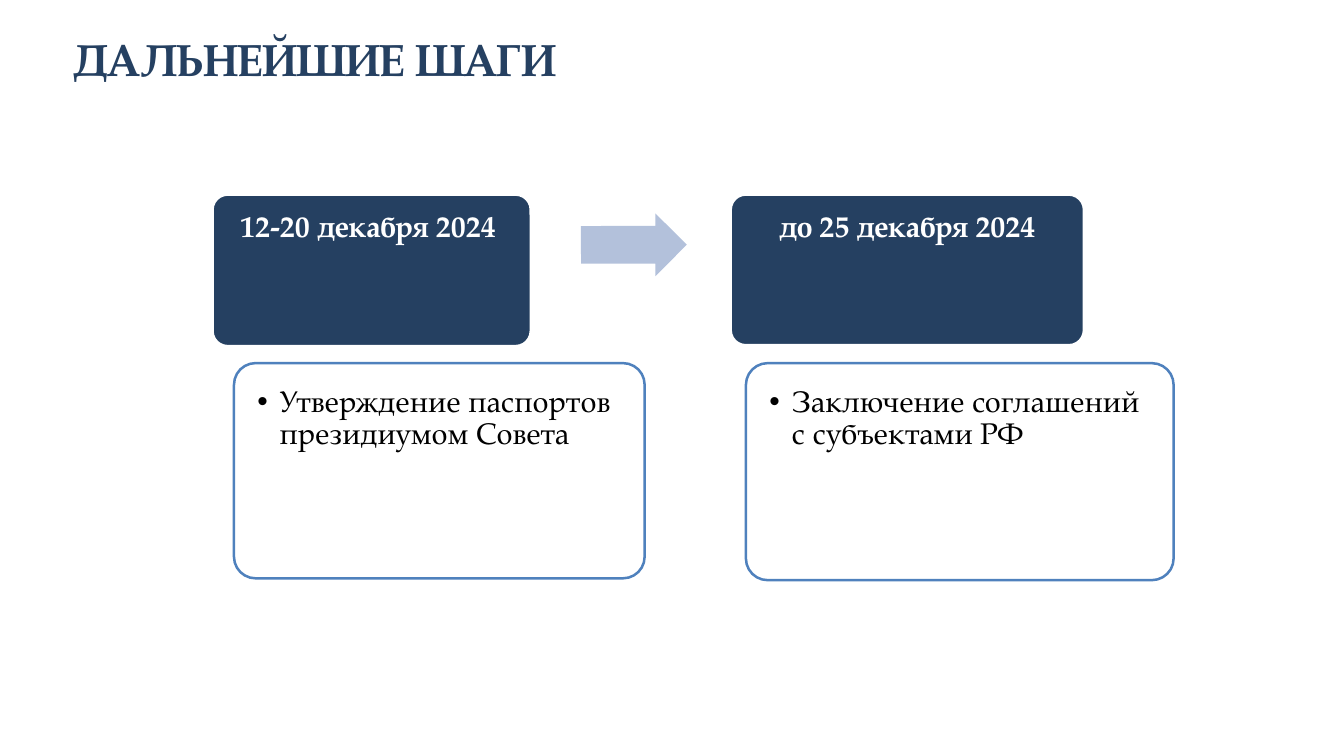
from dataclasses import dataclass

from lxml import etree
from pptx import Presentation, util as u
from pptx.dml.color import RGBColor
from pptx.enum import shapes, text
from pptx.oxml.ns import qn

PX = 9144  # EMU in one px, at 100 px to the inch
FONT = "TeX Gyre Pagella"
COLORS = {
    "navy": "254061",
    "blue": "4F81BD",
    "pale": "B3C1DB",
    "white": "FFFFFF",
    "black": "000000",
}


@dataclass(frozen=True)
class Box:
    left: int
    top: int
    width: int
    height: int

    def emu(self) -> tuple[int, ...]:
        return tuple(v * PX for v in (self.left, self.top, self.width, self.height))

    def inset(self, gap: int) -> "Box":
        return Box(self.left + gap, self.top + gap, self.width - 2 * gap, self.height - 2 * gap)


@dataclass(frozen=True)
class Step:
    date: str
    task: str
    date_box: Box
    task_box: Box


STEPS = [
    Step("12-20 декабря 2024 ", "Утверждение паспортов президиумом Совета",
         Box(237, 217, 355, 169), Box(261, 405, 458, 240)),
    Step("до 25 декабря 2024", "Заключение соглашений\nс субъектами РФ",
         Box(815, 217, 394, 168), Box(832, 405, 477, 242)),
]
ARROW = Box(648, 238, 118, 70)
TITLE = Box(72, 30, 576, 71)


def rgb(color: str) -> RGBColor:
    return RGBColor.from_string(COLORS[color])


def write(shape, content: str, *, size: int = 24, color: str = "black", bold: bool = False,
          align=text.PP_ALIGN.LEFT, spacing: float = 0.9, margin: int | None = None,
          wrap: bool = True, fit=text.MSO_AUTO_SIZE.NONE) -> None:
    frame = shape.text_frame
    frame.word_wrap, frame.auto_size = wrap, fit
    frame.vertical_anchor = text.MSO_ANCHOR.TOP
    if margin is not None:
        frame.margin_left = frame.margin_top = frame.margin_right = margin * PX
    paragraph = frame.paragraphs[0]
    paragraph.text = content
    paragraph.alignment, paragraph.line_spacing = align, spacing
    paragraph.space_before = u.Pt(0)
    for run in paragraph.runs:
        run.font.name, run.font.size, run.font.bold = FONT, u.Pt(size), bold
        run.font.color.rgb = rgb(color)


def place(shape, box: Box) -> None:
    shape.left, shape.top, shape.width, shape.height = box.emu()


def add_block(slide, kind, box: Box, fill: str, line: str | None = None):
    block = slide.shapes.add_shape(kind, *box.emu())
    block.shadow.inherit = False
    block.fill.solid()
    block.fill.fore_color.rgb = rgb(fill)
    if line:
        block.line.color.rgb = rgb(line)
        block.line.width = u.Pt(2)
    else:
        block.line.fill.background()
    return block


def add_card(slide, box: Box, fill: str, line: str):
    card = add_block(slide, shapes.MSO_SHAPE.ROUNDED_RECTANGLE, box, fill, line)
    card.adjustments[0] = 0.1
    return card


def set_opacity(shape, percent: int) -> None:
    color = shape.element.spPr.find(qn("a:solidFill")).find(qn("a:srgbClr"))
    etree.SubElement(color, qn("a:alpha"), val=str(percent * 1000))


def set_hanging_indent(paragraph, indent: int) -> None:
    properties = paragraph._p.get_or_add_pPr()
    properties.set("marL", str(indent * PX))
    properties.set("indent", str(-indent * PX))


def add_step(slide, step: Step, task_list) -> None:
    date_card = add_card(slide, step.date_box, "navy", "white")
    write(date_card, step.date, color="white", bold=True,
          align=text.PP_ALIGN.CENTER, margin=14)

    task_card = add_card(slide, step.task_box, "white", "blue")
    set_opacity(task_card, 90)
    task_card.element.addnext(task_list.element)
    place(task_list, step.task_box.inset(7))
    write(task_list, step.task, margin=19)
    set_hanging_indent(task_list.text_frame.paragraphs[0], 25)


def main() -> None:
    deck = Presentation()
    deck.slide_width, deck.slide_height = 1499 * PX, 842 * PX
    slide = deck.slides.add_slide(deck.slide_layouts[3])

    title, *task_lists = slide.placeholders
    place(title, TITLE)
    write(title, "ДАЛЬНЕЙШИЕ ШАГИ", size=36, color="navy", bold=True, spacing=1.0,
          wrap=False, fit=text.MSO_AUTO_SIZE.SHAPE_TO_FIT_TEXT)

    for step, task_list in zip(STEPS, task_lists):
        add_step(slide, step, task_list)

    arrow = add_block(slide, shapes.MSO_SHAPE.RIGHT_ARROW, ARROW, "pale")
    arrow.adjustments[0], arrow.adjustments[1] = 0.6, 0.5
    arrow.rotation = 359.9

    deck.save("out.pptx")


if __name__ == "__main__":
    main()
